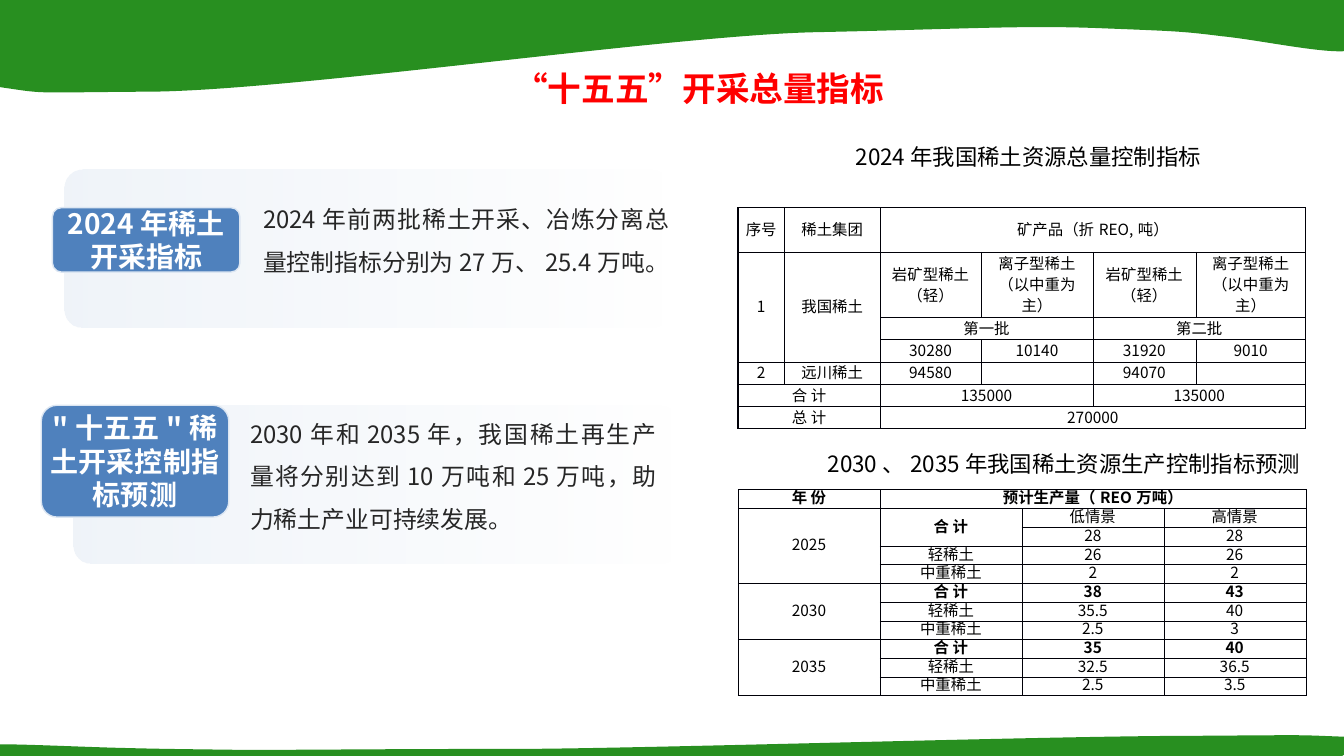
from lxml import etree
from pptx import Presentation
from pptx import util as u
from pptx.dml.color import RGBColor
from pptx.enum import shapes, text
from pptx.oxml.ns import qn

FONT = "Noto Sans CJK SC"
COLORS = {"green": "288F20", "blue": "4F81BD", "pale": "DCE6F2", "white": "FFFFFF",
          "body": "262626", "title": "FF0000", "black": "000000", "grid": "000008"}
PLAIN_TABLE = "{2D5ABB26-0587-4C30-8999-92F81FD0307C}"
CENTER = text.PP_ALIGN.CENTER
TABLE_WIDTH = 5.63

# Each wave: start point, Bezier curves (two controls and an end), closing corners
TOP_WAVE = ((13.44, 0.48),
            [((13.33, 0.58), (12.53, 0.4), (12.12, 0.36)),
             ((11.72, 0.31), (11.67, 0.31), (10.9, 0.28)),
             ((10.13, 0.25), (9.53, 0.29), (8.09, 0.32)),
             ((6.65, 0.35), (2.84, 0.91), (1.45, 0.91)),
             ((0.05, 0.92), (0.6, 0.94), (-0.33, 0.82))],
            [(0, -0.02), (13.33, -0.02)])
BOTTOM_WAVE = ((-0.13, 7.39),
               [((-0.02, 7.37), (0.78, 7.41), (1.19, 7.42)),
                ((1.59, 7.43), (1.64, 7.43), (2.41, 7.44)),
                ((3.18, 7.44), (3.78, 7.43), (5.22, 7.43)),
                ((6.66, 7.42), (10.47, 7.3), (11.86, 7.3)),
                ((13.26, 7.29), (12.71, 7.29), (13.64, 7.32))],
               [(13.31, 7.5), (-0.02, 7.5)])

QUOTA_ROWS = [
    ["序号", "稀土集团", "矿产品（折REO,吨）", "", "", ""],
    ["1", "我国稀土"] + ["岩矿型稀土（轻）", "离子型稀土（以中重为主）"] * 2,
    ["", "", "第一批", "", "第二批", ""],
    ["", "", "30280", "10140", "31920", "9010"],
    ["2", "远川稀土", "94580", "", "94070", ""],
    ["合 计", "", "135000", "", "135000", ""],
    ["总 计", "", "270000", "", "", ""],
]
# Merged ranges: first row, first column, last row, last column
QUOTA_MERGES = [(0, 2, 0, 5), (1, 0, 3, 0), (1, 1, 3, 1), (2, 2, 2, 3), (2, 4, 2, 5),
                (5, 0, 5, 1), (5, 2, 5, 3), (5, 4, 5, 5), (6, 0, 6, 1), (6, 2, 6, 5)]

FORECAST_ROWS = [
    ["年 份", "预计生产量（REO万吨）", "", ""],
    ["2025", "合 计", "低情景", "高情景"],
    ["", "", "28", "28"],
    ["", "轻稀土", "26", "26"],
    ["", "中重稀土", "2", "2"],
    ["2030", "合 计", "38", "43"],
    ["", "轻稀土", "35.5", "40"],
    ["", "中重稀土", "2.5", "3"],
    ["2035", "合 计", "35", "40"],
    ["", "轻稀土", "32.5", "36.5"],
    ["", "中重稀土", "2.5", "3.5"],
]
FORECAST_MERGES = [(0, 1, 0, 3), (1, 0, 4, 0), (1, 1, 2, 1), (5, 0, 7, 0), (8, 0, 10, 0)]
FORECAST_BOLD = {(0, 0), (0, 1), (1, 1)} | {(row, col) for row in (5, 8) for col in (1, 2, 3)}


def rgb(name):
    return RGBColor.from_string(COLORS[name])


def inches(values):
    return [u.Inches(value) for value in values]


def add_span(para, words, size, color, bold=False):
    span = para.add_run()
    span.text = words
    font = span.font
    font.size, font.bold, font.name = u.Pt(size), bold, FONT
    font.color.rgb = rgb(color)
    etree.SubElement(span._r.get_or_add_rPr(), qn("a:ea"), typeface=FONT)


def fill_frame(frame, words, size, color, align, bold=False, inset=None, middle=False):
    frame.word_wrap = True
    if inset is not None:
        frame.margin_left = frame.margin_right = u.Inches(inset)
        frame.margin_top = frame.margin_bottom = u.Inches(inset)
    frame.vertical_anchor = text.MSO_ANCHOR.MIDDLE if middle else text.MSO_ANCHOR.TOP
    para = frame.paragraphs[0]
    para.alignment = align
    add_span(para, words, size, color, bold)
    return para


def add_wave(slide, start, curves, corners):
    """Draw a closed green band, bending its first segments into Bezier curves."""
    ends = [curve[-1] for curve in curves]
    builder = slide.shapes.build_freeform(*inches(start))
    builder.add_line_segments([inches(point) for point in ends + corners], close=True)
    wave = builder.convert_to_shape()
    segments = list(wave._element.spPr.iter(qn("a:lnTo")))
    for segment, curve in zip(segments, curves):
        segment.tag = qn("a:cubicBezTo")
        end = segment[0]
        for control in curve[:2]:
            x, y = inches(control)
            end.addprevious(etree.Element(qn("a:pt"), x=str(x - wave.left), y=str(y - wave.top)))
    wave.shadow.inherit = False
    wave.fill.solid()
    wave.fill.fore_color.rgb = rgb("green")
    wave.line.fill.background()


def add_rounded(slide, area, corner):
    shape = slide.shapes.add_shape(shapes.MSO_SHAPE.ROUNDED_RECTANGLE, *inches(area))
    shape.adjustments[0] = corner
    shape.shadow.inherit = False
    return shape


def add_panel(slide, left, top):
    """Add a pale panel that fades out to the right."""
    panel = add_rounded(slide, (left, top, 6, 1.57), 0.115)
    panel.line.fill.background()
    panel.fill.gradient()
    panel.fill.gradient_angle = 180
    for stop in panel.fill.gradient_stops:
        stop.color.rgb = rgb("pale")
    tints = list(panel._element.spPr.iter(qn("a:srgbClr")))
    for tint, alpha in zip(tints, (0, 44)):
        etree.SubElement(tint, qn("a:alpha"), val=str(alpha * 1000))


def add_badge(slide, area, words):
    badge = add_rounded(slide, area, 0.141)
    badge.fill.solid()
    badge.fill.fore_color.rgb = rgb("blue")
    badge.line.color.rgb = rgb("pale")
    badge.line.width = u.Pt(1)
    fill_frame(badge.text_frame, words, 20, "white", CENTER, True, 0, True)


def add_body(slide, left, top, words):
    box = slide.shapes.add_textbox(*inches((left, top, 4.03, 1.27)))
    para = fill_frame(box.text_frame, words, 17, "body", text.PP_ALIGN.JUSTIFY,
                      inset=0, middle=True)
    para.line_spacing = 1.5


def add_title(slide, words):
    box = slide.shapes.add_textbox(*inches((3.6, 0.62, 6.67, 0.5)))
    fill_frame(box.text_frame, words, 24, "title", CENTER, True)
    box.text_frame.auto_size = text.MSO_AUTO_SIZE.SHAPE_TO_FIT_TEXT


def add_caption(slide, area, words):
    box = slide.shapes.add_textbox(*inches(area))
    para = fill_frame(box.text_frame, words, 16, "black", CENTER)
    para._p.get_or_add_pPr().set("indent", str(u.Inches(0.33)))


def set_borders(cell, widths):
    for side, width in zip("LRTB", widths):
        line = etree.SubElement(cell._tc.get_or_add_tcPr(), qn("a:ln" + side),
                                w=str(u.Pt(width)))
        fill = etree.SubElement(line, qn("a:solidFill"))
        etree.SubElement(fill, qn("a:srgbClr"), val=COLORS["grid"])


def add_grid(slide, top, widths, heights, rows, merges, spacing, side_line, bold=()):
    """Add a ruled table; side_line is the width of its left and right edges."""
    area = inches((7.32, top, TABLE_WIDTH, sum(heights)))
    table = slide.shapes.add_table(len(rows), len(widths), *area).table
    table.first_row = table.horz_banding = False
    table._tbl.tblPr.find(qn("a:tableStyleId")).text = PLAIN_TABLE
    for column, width in zip(table.columns, widths):
        column.width = u.Inches(width)
    for row, height in zip(table.rows, heights):
        row.height = u.Inches(height)
    for row, col, last_row, last_col in merges:
        table.cell(row, col).merge(table.cell(last_row, last_col))
    for r, row in enumerate(rows):
        for c, words in enumerate(row):
            cell = table.cell(r, c)
            cell.margin_left = cell.margin_right = u.Inches(0.07)
            cell.margin_top = cell.margin_bottom = 0
            cell.vertical_anchor = text.MSO_ANCHOR.MIDDLE
            para = cell.text_frame.paragraphs[0]
            para.alignment = CENTER
            para.line_spacing = u.Pt(spacing)
            if words:
                add_span(para, words, 11, "black", (r, c) in bold)
            else:
                etree.SubElement(para._p, qn("a:endParaRPr"), sz="1100")
            if not cell.is_spanned:
                right, bottom = c + cell.span_width, r + cell.span_height
                set_borders(cell, (side_line if c == 0 else 0.25,
                                   side_line if right == len(widths) else 0.25,
                                   1 if r == 0 else 0.25,
                                   1 if bottom == len(rows) else 0.25))
            cell.fill.background()


def main():
    deck = Presentation()
    deck.slide_width, deck.slide_height = inches((13.33, 7.5))
    page = deck.slides.add_slide(deck.slide_layouts[6])
    add_wave(page, *TOP_WAVE)
    add_wave(page, *BOTTOM_WAVE)
    add_panel(page, 0.64, 1.68)
    add_badge(page, (0.52, 2.06, 1.86, 0.64), "2024年稀土开采指标")
    add_body(page, 2.61, 1.68, "2024年前两批稀土开采、冶炼分离总量控制指标分别为27万、25.4万吨。")
    add_panel(page, 0.73, 4.02)
    add_badge(page, (0.41, 4.02, 1.86, 1.11), '"十五五"稀土开采控制指标预测')
    add_body(page, 2.48, 4.02,
             "2030年和2035年，我国稀土再生产量将分别达到10万吨和25万吨，助力稀土产业可持续发展。")
    add_title(page, "“十五五”开采总量指标")
    add_caption(page, (7.73, 1.37, 4.61, 0.68), "2024年我国稀土资源总量控制指标")
    add_grid(page, 2.06, [0.46, 0.95, 1, 1.11, 1.02, 1.09], [0.44, 0.65] + [0.22] * 5,
             QUOTA_ROWS, QUOTA_MERGES, 15, 1)
    add_caption(page, (7.56, 4.42, 5.66, 0.77), "2030、2035年我国稀土资源生产控制指标预测")
    add_grid(page, 4.86, [TABLE_WIDTH / 4] * 4, [2.04 / 11] * 11,
             FORECAST_ROWS, FORECAST_MERGES, 13, 0.25, FORECAST_BOLD)
    deck.save("out.pptx")


if __name__ == "__main__":
    main()
